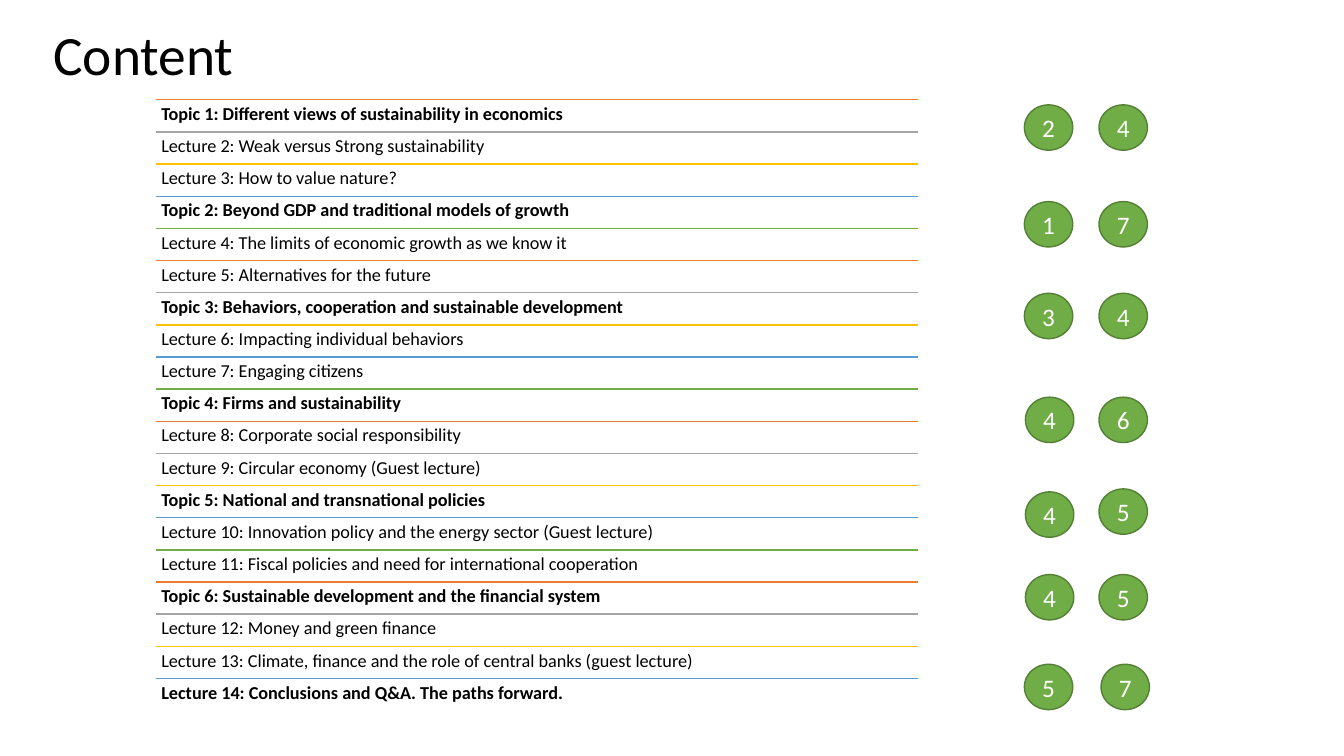
from itertools import cycle
from lxml.etree import SubElement
from pptx import Presentation
from pptx.dml.color import RGBColor
from pptx.enum.shapes import MSO_CONNECTOR as Connector, MSO_SHAPE as Shape
from pptx.enum.text import MSO_ANCHOR as Anchor, PP_ALIGN as Align
from pptx.oxml.ns import qn
from pptx.util import Inches, Pt

FONT = "Calibri"
TITLE = "Content"
AGENDA = [
    ("Topic 1: Different views of sustainability in economics", True),
    ("Lecture 2: Weak versus Strong sustainability", False),
    ("Lecture 3: How to value nature?", False),
    ("Topic 2: Beyond GDP and traditional models of growth", True),
    ("Lecture 4: The limits of economic growth as we know it", False),
    ("Lecture 5: Alternatives for the future", False),
    ("Topic 3: Behaviors, cooperation and sustainable development", True),
    ("Lecture 6: Impacting individual behaviors", False),
    ("Lecture 7: Engaging citizens", False),
    ("Topic 4: Firms and sustainability", True),
    ("Lecture 8: Corporate social responsibility", False),
    ("Lecture 9: Circular economy (Guest lecture)", False),
    ("Topic 5: National and transnational policies", True),
    ("Lecture 10: Innovation policy and the energy sector (Guest lecture)", False),
    ("Lecture 11: Fiscal policies and need for international cooperation", False),
    ("Topic 6: Sustainable development and the financial system", True),
    ("Lecture 12: Money and green finance", False),
    ("Lecture 13: Climate, finance and the role of central banks (guest lecture)", False),
    ("Lecture 14: Conclusions and Q&A. The paths forward.", True),
]
RULE_COLORS = ["ED7D31", "A5A5A5", "FFC000", "5B9BD5", "70AD47"]
BADGES = [
    ("2", 10.16, 1.04), ("4", 10.9, 1.04),
    ("1", 10.16, 2), ("7", 10.9, 2),
    ("3", 10.16, 2.91), ("4", 10.9, 2.91),
    ("4", 10.17, 3.94), ("6", 10.9, 3.94),
    ("4", 10.17, 4.88), ("5", 10.9, 4.85),
    ("4", 10.17, 5.7), ("5", 10.9, 5.7),
    ("5", 10.16, 6.59), ("7", 10.92, 6.59),
]
LIST_LEFT, LIST_TOP, LIST_WIDTH, LIST_HEIGHT = 1.55, 0.99, 7.55, 6.06
ROW_HEIGHT = LIST_HEIGHT / len(AGENDA)


def color(value):
    return RGBColor.from_string(value)


def write(shape, text, size, ink="000000", bold=False, inset=0.05,
          anchor=Anchor.TOP, align=Align.LEFT, spacing=0.9):
    frame = shape.text_frame
    frame.word_wrap = True
    frame.vertical_anchor = anchor
    frame.margin_left = frame.margin_right = Inches(inset)
    frame.margin_top = frame.margin_bottom = Inches(min(inset, 0.05))
    paragraph = frame.paragraphs[0]
    paragraph.alignment = align
    paragraph.line_spacing = spacing
    run = paragraph.add_run()
    run.text = text
    run.font.name = FONT
    run.font.size = Pt(size)
    run.font.bold = bold
    run.font.color.rgb = color(ink)


def add_rule(slide, top, tint):
    rule = slide.shapes.add_connector(
        Connector.STRAIGHT, Inches(LIST_LEFT), Inches(top),
        Inches(LIST_LEFT + LIST_WIDTH), Inches(top))
    rule.line.color.rgb = color(tint)
    rule.line.width = Pt(1)
    SubElement(rule._element.spPr, qn("a:effectLst"))


def add_badge(slide, number, left, top):
    badge = slide.shapes.add_shape(
        Shape.FLOWCHART_CONNECTOR, Inches(left), Inches(top), Inches(0.48), Inches(0.45))
    badge.shadow.inherit = False
    badge.fill.solid()
    badge.fill.fore_color.rgb = color("70AD47")
    badge.line.color.rgb = color("538035")
    badge.line.width = Pt(1)
    write(badge, number, 18, "FFFFFF", inset=0, anchor=Anchor.MIDDLE,
          align=Align.CENTER, spacing=1.0)


def main():
    presentation = Presentation()
    presentation.slide_width, presentation.slide_height = Inches(13.33), Inches(7.5)
    slide = presentation.slides.add_slide(presentation.slide_layouts[6])

    title = slide.shapes.add_textbox(Inches(0.43), Inches(0.28), Inches(11.5), Inches(0.58))
    write(title, TITLE, 39.6, inset=0.1, anchor=Anchor.MIDDLE)

    for row, ((text, bold), tint) in enumerate(zip(AGENDA, cycle(RULE_COLORS))):
        top = LIST_TOP + row * ROW_HEIGHT
        add_rule(slide, top, tint)
        entry = slide.shapes.add_textbox(
            Inches(LIST_LEFT), Inches(top), Inches(LIST_WIDTH), Inches(ROW_HEIGHT))
        write(entry, text, 13, bold=bold)

    for number, left, top in BADGES:
        add_badge(slide, number, left, top)

    presentation.save("out.pptx")


if __name__ == "__main__":
    main()
